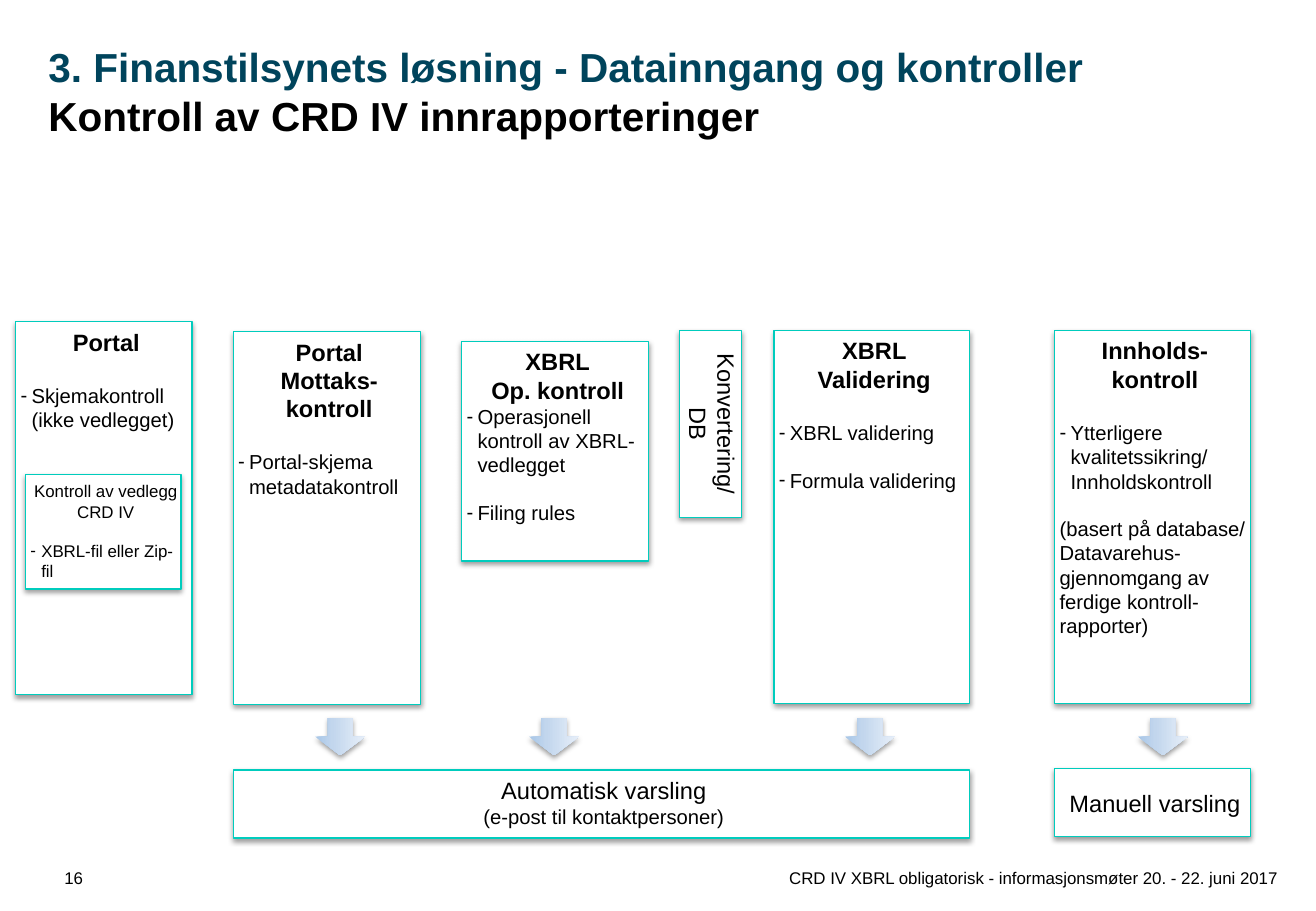
from copy import deepcopy

from lxml import etree
from pptx import Presentation
from pptx.dml.color import RGBColor
from pptx.enum.shapes import MSO_SHAPE
from pptx.enum.text import MSO_ANCHOR, PP_ALIGN
from pptx.oxml.ns import qn
from pptx.util import Inches, Pt

RECTANGLE, DOWN_ARROW = MSO_SHAPE.RECTANGLE, MSO_SHAPE.DOWN_ARROW
TOP, MIDDLE = MSO_ANCHOR.TOP, MSO_ANCHOR.MIDDLE
LEFT, CENTER, RIGHT = PP_ALIGN.LEFT, PP_ALIGN.CENTER, PP_ALIGN.RIGHT

FONT = "Arial"
BLACK = RGBColor(0x00, 0x00, 0x00)
WHITE = RGBColor(0xFF, 0xFF, 0xFF)
NAVY = RGBColor(0x00, 0x44, 0x5C)
TEAL = RGBColor(0x00, 0xCC, 0xBD)
ARROW_STOPS = [
    (0, RGBColor(0xA7, 0xC6, 0xE7)),
    (0.35, RGBColor(0xC2, 0xD6, 0xED)),
    (1, RGBColor(0xE7, 0xEF, 0xF9)),
]

HEADING = dict(size=14, bold=True, align=CENTER)
LABEL = dict(size=14, align=CENTER)
BULLET = dict(size=12, indent=0.09, bullet=True)
SMALL = dict(size=10, align=CENTER)
PANEL_INSETS = (0.04, 0.05, 0, 0.05)
HEADING_GAP, BULLET_GAP, SMALL_GAP = 16.1, 13.8, 11.5
COLUMN_HEIGHT = 3.07

COLUMNS = [
    ((0.13, 2.65, 1.45, COLUMN_HEIGHT), [
        ("Portal", HEADING),
        ("Skjemakontroll (ikke vedlegget)", dict(BULLET, before=HEADING_GAP)),
    ]),
    ((1.92, 2.73, 1.54, COLUMN_HEIGHT), [
        ("Portal", HEADING),
        ("Mottaks-kontroll", HEADING),
        ("Portal-skjema metadatakontroll", dict(BULLET, before=HEADING_GAP)),
    ]),
    ((3.8, 2.81, 1.54, 1.81), [
        ("XBRL", HEADING),
        ("Op. kontroll", HEADING),
        ("Operasjonell kontroll av XBRL-vedlegget", BULLET),
        ("Filing rules", dict(BULLET, before=BULLET_GAP)),
    ]),
    ((6.37, 2.72, 1.61, COLUMN_HEIGHT), [
        ("XBRL", HEADING),
        ("Validering", HEADING),
        ("XBRL validering", dict(BULLET, before=HEADING_GAP)),
        ("Formula validering", dict(BULLET, before=BULLET_GAP)),
    ]),
    ((8.68, 2.72, 1.61, COLUMN_HEIGHT), [
        ("Innholds-kontroll", HEADING),
        ("Ytterligere kvalitetssikring/", dict(BULLET, before=HEADING_GAP)),
        ("Innholdskontroll", dict(size=12, indent=0.09)),
        ("(basert på database/", dict(size=12, before=BULLET_GAP)),
        ("Datavarehus-gjennomgang av ferdige kontroll-rapporter)", dict(size=12)),
    ]),
    ((0.21, 3.91, 1.28, 0.94), [
        ("Kontroll av vedlegg", SMALL),
        ("CRD IV", SMALL),
        ("XBRL-fil eller Zip-fil", dict(BULLET, size=10, before=SMALL_GAP)),
    ]),
]
ARROW_CENTERS = [2.8, 4.56, 7.16, 9.57]


def write_para(para, text, size=12, bold=False, color=BLACK, align=LEFT,
               before=0, indent=0, bullet=False):
    para.alignment = align
    if before:
        para.space_before = Pt(before)
    if indent:
        properties = para._p.get_or_add_pPr()
        properties.set("marL", str(Inches(indent)))
        properties.set("indent", str(-Inches(indent) if bullet else 0))
        if bullet:
            etree.SubElement(properties, qn("a:buFont")).set("typeface", FONT)
            etree.SubElement(properties, qn("a:buChar")).set("char", "-")
    span = para.add_run()
    span.text = text
    span.font.name = FONT
    span.font.size = Pt(size)
    span.font.bold = bold
    span.font.color.rgb = color


def fill_frame(frame, entries, insets=(0, 0, 0, 0), anchor=TOP, wrap=True):
    frame.margin_left, frame.margin_top, frame.margin_right, frame.margin_bottom = map(Inches, insets)
    frame.vertical_anchor = anchor
    frame.word_wrap = wrap
    for index, (text, style) in enumerate(entries):
        para = frame.add_paragraph() if index else frame.paragraphs[0]
        write_para(para, text, **style)


def add_text(page, box, entries, **layout):
    text_box = page.shapes.add_textbox(*map(Inches, box))
    fill_frame(text_box.text_frame, entries, **layout)


def add_shadowed_shape(page, kind, box):
    shape = page.shapes.add_shape(kind, *map(Inches, box))
    shape.shadow.inherit = False
    effects = shape.element.spPr.find(qn("a:effectLst"))
    shadow = etree.SubElement(effects, qn("a:outerShdw"), blurRad=str(Pt(3.1)),
                              dist=str(Pt(1.6)), dir="5400000", rotWithShape="0")
    color = etree.SubElement(shadow, qn("a:srgbClr"), val="000000")
    etree.SubElement(color, qn("a:alpha"), val="38000")
    return shape


def add_panel(page, box, entries, anchor=TOP, vertical=False):
    panel = add_shadowed_shape(page, RECTANGLE, box)
    panel.fill.solid()
    panel.fill.fore_color.rgb = WHITE
    panel.line.color.rgb = TEAL
    panel.line.width = Pt(0.75)
    fill_frame(panel.text_frame, entries, PANEL_INSETS, anchor)
    if vertical:
        panel.text_frame._txBody.bodyPr.set("vert", "vert")


def add_arrow(page, box):
    arrow = add_shadowed_shape(page, DOWN_ARROW, box)
    arrow.line.fill.background()
    arrow.fill.gradient()
    arrow.fill.gradient_angle = 0
    stop_list = arrow.element.spPr.find(qn("a:gradFill")).find(qn("a:gsLst"))
    stop_list.append(deepcopy(stop_list[-1]))
    for stop, (position, color) in zip(arrow.fill.gradient_stops, ARROW_STOPS):
        stop.position = position
        stop.color.rgb = color


def add_title(page, box):
    add_text(page, box, [
        ("3. Finanstilsynets løsning - Datainngang og kontroller",
         dict(size=24, bold=True, color=NAVY)),
        ("Kontroll av CRD IV innrapporteringer", dict(size=24, bold=True)),
    ], insets=(0.1, 0.05, 0.1, 0.05))


def add_controls(page):
    for box, entries in COLUMNS:
        add_panel(page, box, entries)
    add_panel(page, (5.59, 2.72, 0.51, 1.54), [("Konvertering/DB", LABEL)],
              anchor=MIDDLE, vertical=True)


def add_alerts(page, top):
    width, height = 0.41, 0.31
    for center in ARROW_CENTERS:
        add_arrow(page, (center - width / 2, top, width, height))
    add_panel(page, (1.92, top + 0.43, 6.06, 0.56), [
        ("Automatisk varsling", LABEL),
        ("(e-post til kontaktpersoner)", dict(size=12, align=CENTER)),
    ])
    add_panel(page, (8.68, top + 0.42, 1.61, 0.56), [("Manuell varsling", LABEL)], anchor=MIDDLE)


def add_footer(page, top):
    add_text(page, (0.53, top, 0.79, 0.17), [("16", dict(size=10))])
    add_text(page, (1.32, top, 9.19, 0.17), [
        ("CRD IV XBRL obligatorisk - informasjonsmøter 20. - 22. juni 2017",
         dict(size=10, align=RIGHT)),
    ])


def main():
    deck = Presentation()
    deck.slide_width, deck.slide_height = Inches(10.83), Inches(7.5)
    page = deck.slides.add_slide(deck.slide_layouts[6])
    add_title(page, (0.3, 0.3, 10.24, 1.25))
    add_controls(page)
    add_alerts(page, 5.91)
    add_footer(page, 7.14)
    deck.save("out.pptx")


if __name__ == "__main__":
    main()
